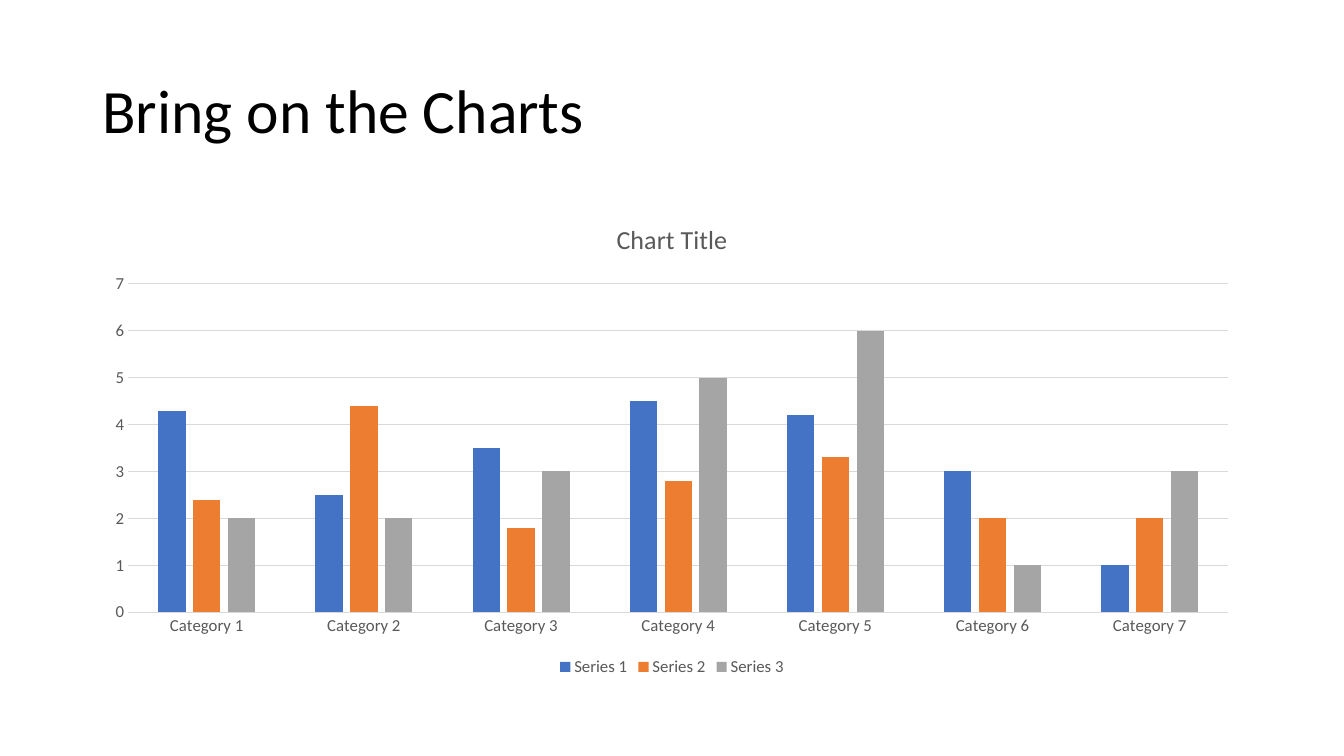
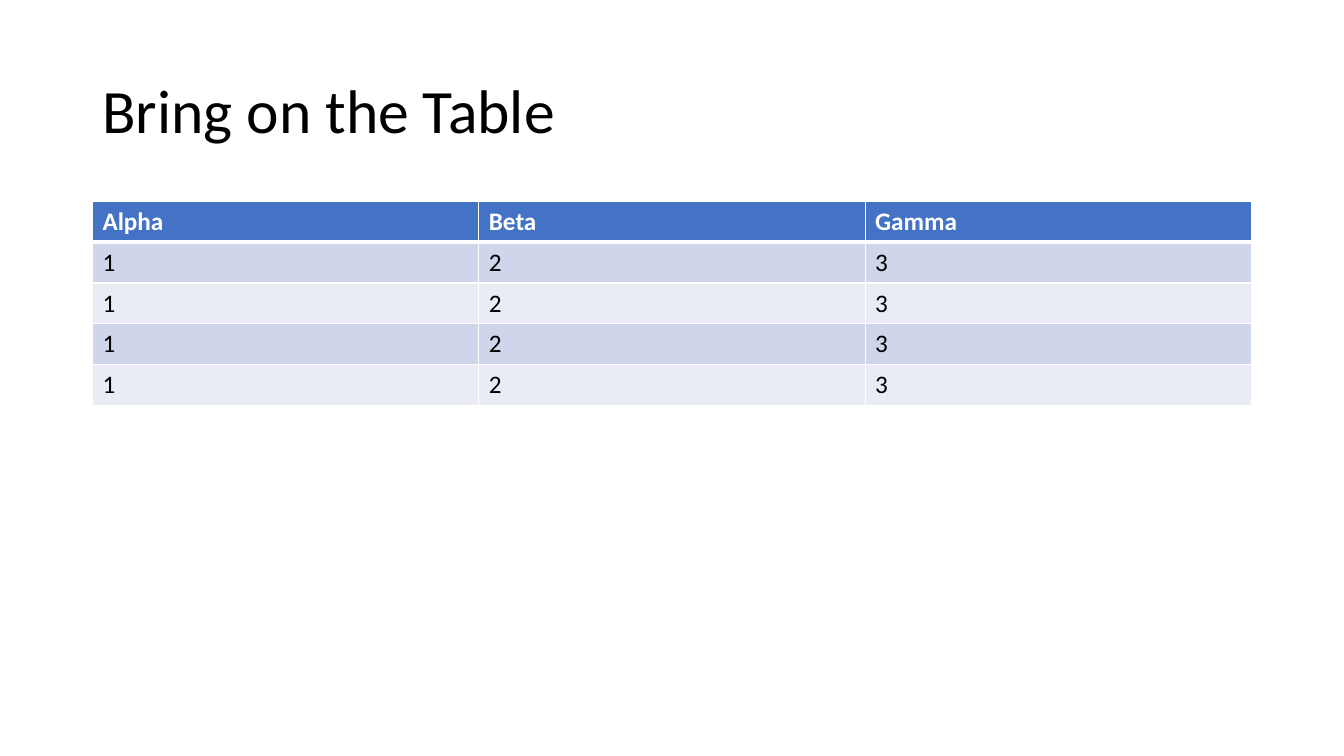
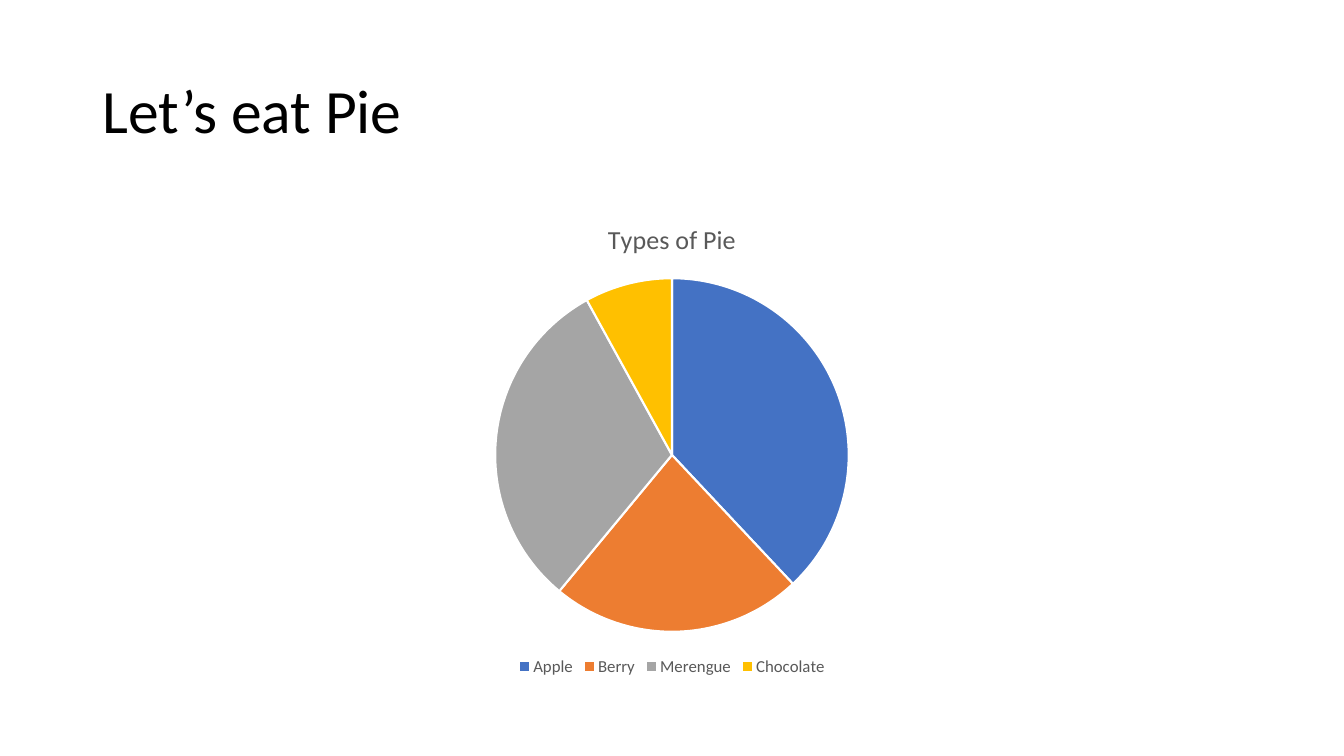
from dataclasses import dataclass

from lxml import etree
from pptx import Presentation
from pptx import util as u
from pptx.chart.data import CategoryChartData
from pptx.dml.color import RGBColor
from pptx.enum import chart as charts
from pptx.enum import text
from pptx.oxml.ns import qn


# Colours, type sizes and positions (lengths in cm)
@dataclass(frozen=True)
class Theme:
    font: str = "Calibri"
    ink: str = "000000"
    paper: str = "FFFFFF"
    muted: str = "595959"
    grid: str = "D9D9D9"
    accents: tuple = ("4472C4", "ED7D31", "A5A5A5", "FFC000")
    bands: tuple = ("CFD5EA", "E9EBF5")
    title_size: float = 44
    chart_title_size: float = 18.6
    table_size: float = 18
    label_size: float = 12
    slide_size: tuple = (33.87, 19.05)
    title_box: tuple = (2.33, 1.01, 29.21, 3.68)
    content_box: tuple = (2.33, 5.07, 29.21, 12.09)
    row_height: float = 1.03


def set_format(target, values):
    for name, value in values.items():
        setattr(target, name, value)


def lengths(box):
    return [u.Cm(value) for value in box]


class Deck:
    def __init__(self, theme):
        self.theme = theme
        self.slide = None
        self.presentation = Presentation()
        width, height = lengths(theme.slide_size)
        set_format(self.presentation, {"slide_width": width, "slide_height": height})

    # Shared formatting
    def style_font(self, font, size, color, bold=False):
        set_format(font, {"name": self.theme.font, "size": u.Pt(size), "bold": bold})
        font.color.rgb = RGBColor.from_string(color)

    def fill(self, target, color):
        target.fill.solid()
        target.fill.fore_color.rgb = RGBColor.from_string(color)

    def style_line(self, line, color, width):
        line.color.rgb = RGBColor.from_string(color)
        line.width = u.Pt(width)

    # Slide with its title
    def add_slide(self, title):
        self.slide = self.presentation.slides.add_slide(self.presentation.slide_layouts[5])
        shape = self.slide.shapes.title
        set_format(shape, dict(zip(("left", "top", "width", "height"),
                                   lengths(self.theme.title_box))))
        frame = shape.text_frame
        frame.text = title
        set_format(frame, {"word_wrap": True, "auto_size": text.MSO_AUTO_SIZE.NONE,
                           "vertical_anchor": text.MSO_ANCHOR.MIDDLE})
        paragraph = frame.paragraphs[0]
        set_format(paragraph, {"alignment": text.PP_ALIGN.LEFT, "line_spacing": 0.9})
        self.style_font(paragraph.runs[0].font, self.theme.title_size, self.theme.ink)

    # Chart with title and bottom legend
    def add_chart(self, kind, title, categories, series):
        data = CategoryChartData()
        data.categories = categories
        for name, values in series.items():
            data.add_series(name, values)
        chart = self.slide.shapes.add_chart(
            kind, *lengths(self.theme.content_box), data).chart
        self.style_font(chart.font, self.theme.label_size, self.theme.muted)
        set_format(chart, {"has_title": True, "has_legend": True})
        frame = chart.chart_title.text_frame
        frame.text = title
        self.style_font(frame.paragraphs[0].runs[0].font,
                        self.theme.chart_title_size, self.theme.muted)
        chart.chart_title.include_in_layout = False
        set_format(chart.legend, {"position": charts.XL_LEGEND_POSITION.BOTTOM,
                                  "include_in_layout": False})
        self.style_font(chart.legend.font, self.theme.label_size, self.theme.muted)
        return chart

    def add_column_chart(self, title, categories, series):
        chart = self.add_chart(charts.XL_CHART_TYPE.COLUMN_CLUSTERED,
                               title, categories, series)
        plot = chart.plots[0]
        set_format(plot, {"gap_width": 219, "overlap": -27, "vary_by_categories": False})
        for column, color in zip(plot.series, self.theme.accents):
            self.fill(column.format, color)
        for axis in (chart.category_axis, chart.value_axis):
            set_format(axis, {"major_tick_mark": charts.XL_TICK_MARK.NONE,
                              "minor_tick_mark": charts.XL_TICK_MARK.NONE})
            self.style_font(axis.tick_labels.font, self.theme.label_size, self.theme.muted)
        self.style_line(chart.category_axis.format.line, self.theme.grid, 0.75)
        set_format(chart.value_axis, {"minimum_scale": 0, "maximum_scale": 7,
                                      "major_unit": 1, "has_major_gridlines": True})
        chart.value_axis.format.line.fill.background()
        self.style_line(chart.value_axis.major_gridlines.format.line, self.theme.grid, 0.75)

    def add_pie_chart(self, title, slices):
        chart = self.add_chart(charts.XL_CHART_TYPE.PIE, title,
                               list(slices), {title: list(slices.values())})
        plot = chart.plots[0]
        plot.vary_by_categories = True
        for index, color in zip(range(len(slices)), self.theme.accents):
            point = plot.series[0].points[index]
            self.fill(point.format, color)
            self.style_line(point.format.line, self.theme.paper, 1.5)

    # Table with header and banded rows
    def add_table(self, rows):
        left, top, width, _ = lengths(self.theme.content_box)
        height = u.Cm(self.theme.row_height)
        table = self.slide.shapes.add_table(
            len(rows), len(rows[0]), left, top, width, height * len(rows)).table
        for row_index, row in enumerate(rows):
            table.rows[row_index].height = height
            header = row_index == 0
            color = self.theme.accents[0] if header else self.theme.bands[(row_index - 1) % 2]
            for column_index, value in enumerate(row):
                cell = table.cell(row_index, column_index)
                cell.text = value
                self.style_font(cell.text_frame.paragraphs[0].runs[0].font,
                                self.theme.table_size,
                                self.theme.paper if header else self.theme.ink, header)
                self.add_borders(cell, {"lnL": 1, "lnR": 1,
                                        "lnT": 3 if row_index == 1 else 1,
                                        "lnB": 3 if header else 1})
                self.fill(cell, color)

    def add_borders(self, cell, widths):
        properties = cell._tc.get_or_add_tcPr()
        for side, width in widths.items():
            line = etree.SubElement(properties, qn(f"a:{side}"), w=str(u.Pt(width)))
            solid = etree.SubElement(line, qn("a:solidFill"))
            etree.SubElement(solid, qn("a:srgbClr"), val=self.theme.paper)


def main():
    deck = Deck(Theme())

    # Column chart
    deck.add_slide("Bring on the Charts")
    deck.add_column_chart("Chart Title", [f"Category {n}" for n in range(1, 8)], {
        "Series 1": (4.3, 2.5, 3.5, 4.5, 4.2, 3, 1),
        "Series 2": (2.4, 4.4, 1.8, 2.8, 3.3, 2, 2),
        "Series 3": (2, 2, 3, 5, 6, 1, 3),
    })

    # Table
    deck.add_slide("Bring on the Table")
    deck.add_table([("Alpha", "Beta", "Gamma")] + [("1", "2", "3")] * 4)

    # Pie chart
    deck.add_slide("Let’s eat Pie")
    deck.add_pie_chart("Types of Pie",
                       {"Apple": 38, "Berry": 23, "Merengue": 31, "Chocolate": 8})

    deck.presentation.save("out.pptx")


if __name__ == "__main__":
    main()
